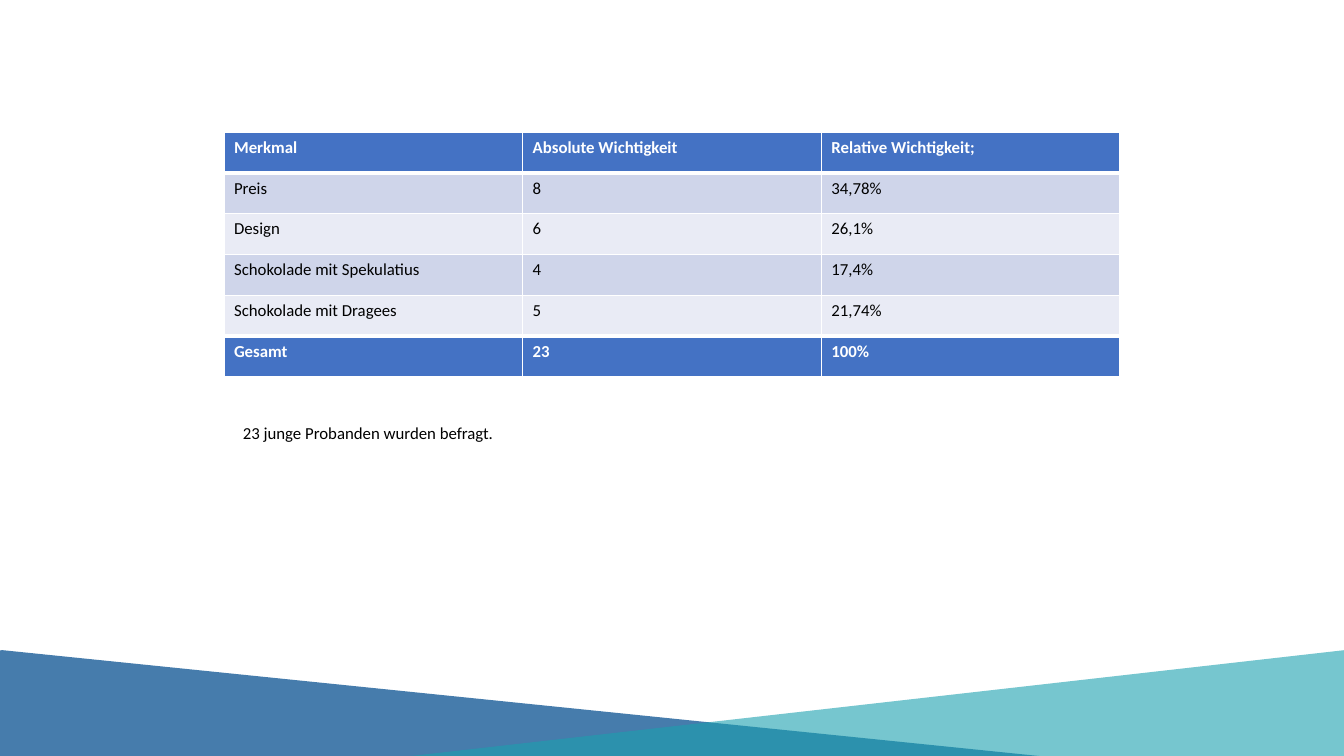
import lxml.etree
import pptx
import pptx.dml.color
import pptx.enum.shapes
import pptx.oxml.ns
import pptx.util

qn = pptx.oxml.ns.qn

deck = pptx.Presentation()
deck.slide_width = pptx.util.Inches(13.33)
deck.slide_height = pptx.util.Inches(7.5)
slide = deck.slides.add_slide(deck.slide_layouts[6])

# One grid unit is a hundredth of the slide's width or height.
column = deck.slide_width / 100
row = deck.slide_height / 100


def paint(fill, color, opacity=100):
    """Fill solidly with a hex colour at an opacity in percent."""
    fill.solid()
    fill.fore_color.rgb = pptx.dml.color.RGBColor.from_string(color)
    if opacity < 100:
        tint = fill._xPr.find(qn("a:solidFill"))[0]
        lxml.etree.SubElement(tint, qn("a:alpha"), val=str(opacity * 1000))


def write(frame, text, color, bold=False):
    paragraph = frame.paragraphs[0]
    paragraph.text = text
    font = paragraph.runs[0].font
    text_format = {"name": "Calibri", "size": pptx.util.Pt(12), "bold": bold}
    for attribute, value in text_format.items():
        setattr(font, attribute, value)
    paint(font.fill, color)


# Overlapping slopes along the bottom edge
slopes = [
    (-57.6, 148.1, 16.4, 0.39, "095191", 75),
    (14.7, 170.65, 17.2, 0.5, "1BA0AF", 60),
]
for left, width, height, peak, color, opacity in slopes:
    slope = slide.shapes.add_shape(
        pptx.enum.shapes.MSO_SHAPE.ISOSCELES_TRIANGLE,
        round(left * column), round(86 * row),
        round(width * column), round(height * row))
    slope.adjustments[0] = peak
    slope.shadow.inherit = False
    slope.line.fill.background()
    paint(slope.fill, color, opacity)

# Importance of each feature
importance = [
    ("Merkmal", "Absolute Wichtigkeit", "Relative Wichtigkeit;"),
    ("Preis", "8", "34,78%"),
    ("Design", "6", "26,1%"),
    ("Schokolade mit Spekulatius", "4", "17,4%"),
    ("Schokolade mit Dragees", "5", "21,74%"),
    ("Gesamt", "23", "100%"),
]
last = len(importance) - 1
table = slide.shapes.add_table(
    len(importance), 3, deck.slide_width // 6, round(17.5 * row),
    deck.slide_width * 2 // 3, round(5.4 * row) * len(importance)).table
table.last_row = True

for line, values in enumerate(importance):
    emphasis = line in (0, last)
    band = "4472C4" if emphasis else ("E9EBF5", "CFD5EA")[line % 2]
    borders = {
        "a:lnL": 1,
        "a:lnR": 1,
        "a:lnT": 3 if line in (1, last) else 1,
        "a:lnB": 3 if line in (0, last - 1) else 1,
    }
    for position, value in enumerate(values):
        cell = table.cell(line, position)
        write(cell.text_frame, value, "FFFFFF" if emphasis else "000000", emphasis)
        paint(cell.fill, band)
        properties = cell._tc.get_or_add_tcPr()
        for order, (side, points) in enumerate(borders.items()):
            border = lxml.etree.Element(qn(side), w=str(pptx.util.Pt(points)))
            stroke = lxml.etree.SubElement(border, qn("a:solidFill"))
            lxml.etree.SubElement(stroke, qn("a:srgbClr"), val="FFFFFF")
            properties.insert(order, border)

respondents = slide.shapes.add_textbox(
    round(17.33 * column), round(55.2 * row),
    round(66 * column), round(4 * row)).text_frame
respondents.word_wrap = True
write(respondents, "23 junge Probanden wurden befragt.", "000000")

deck.save("out.pptx")
